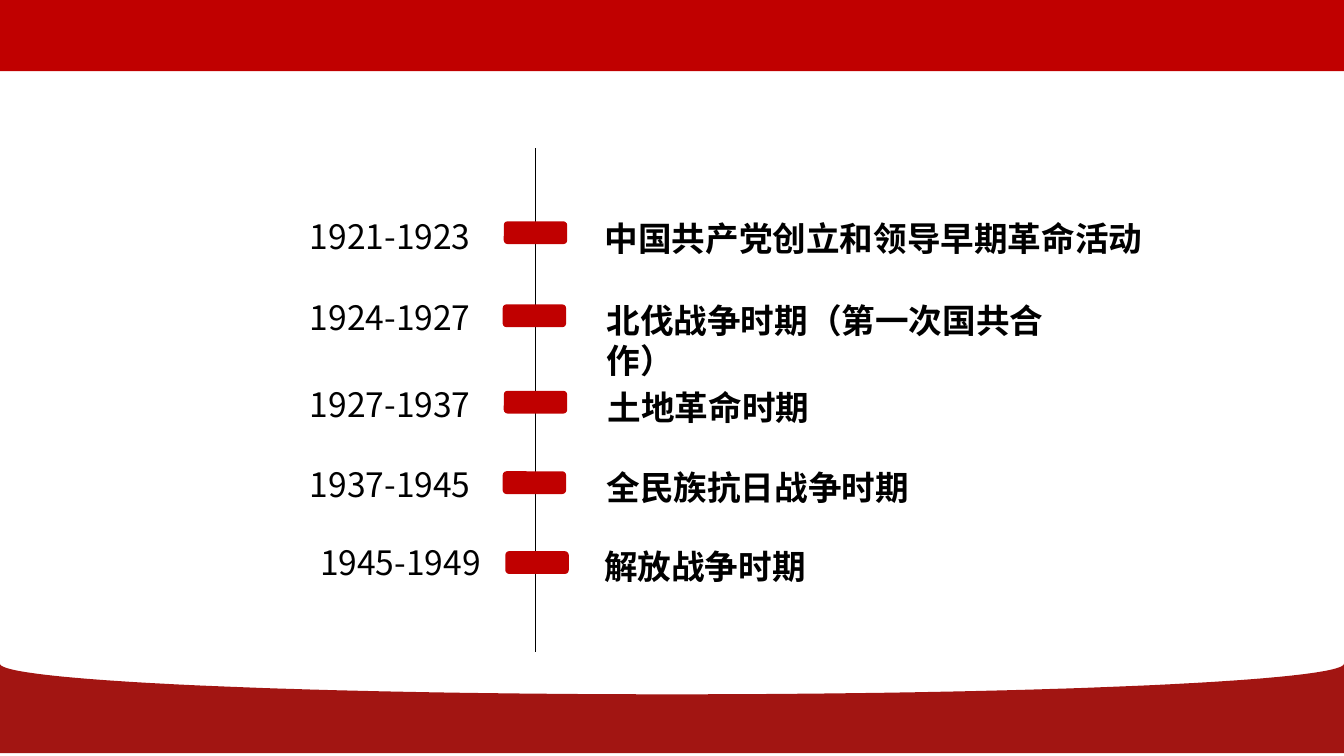
from math import cos, pi, sin

from lxml.etree import SubElement
from pptx import Presentation
from pptx.dml.color import RGBColor
from pptx.enum.shapes import MSO_CONNECTOR, MSO_SHAPE as SHAPE
from pptx.enum.text import MSO_AUTO_SIZE, PP_ALIGN as ALIGN
from pptx.oxml.ns import qn
from pptx.util import Pt

RED = RGBColor(0xC0, 0x00, 0x00)
DARK_RED = RGBColor(0xA2, 0x15, 0x12)
BLACK = RGBColor(0x00, 0x00, 0x00)
FONT = "Noto Sans CJK SC"

presentation = Presentation()
presentation.slide_width = Pt(720)
presentation.slide_height = Pt(405)
slide = presentation.slides.add_slide(presentation.slide_layouts[6])
shapes = slide.shapes


def paint(shape, color):
    shape.shadow.inherit = False
    shape.fill.solid()
    shape.fill.fore_color.rgb = color
    shape.line.fill.background()


def add_text(text, left, top, width, height, bold=False, align=ALIGN.LEFT):
    box = shapes.add_textbox(Pt(left), Pt(top), Pt(width), Pt(height))
    frame = box.text_frame
    frame.word_wrap = True
    frame.auto_size = MSO_AUTO_SIZE.SHAPE_TO_FIT_TEXT
    frame.margin_left = frame.margin_right = Pt(5.4)
    frame.margin_top = frame.margin_bottom = Pt(2.7)
    paragraph = frame.paragraphs[0]
    paragraph.alignment = align
    run = paragraph.add_run()
    run.text = text
    run.font.name = FONT
    run.font.size = Pt(18)
    run.font.bold = bold
    run.font.color.rgb = BLACK
    east_asian = SubElement(run.font._element, qn("a:ea"))
    east_asian.set("typeface", FONT)


header = shapes.add_shape(SHAPE.RECTANGLE, 0, 0, Pt(720), Pt(38.2))
paint(header, RED)

curve_steps = 120
curve = [
    (Pt(360 - 360 * cos(pi * step / curve_steps)),
     Pt(355.6 + 16.4 * sin(pi * step / curve_steps)))
    for step in range(curve_steps + 1)
]
builder = shapes.build_freeform(0, Pt(403.5))
builder.add_line_segments(curve + [(Pt(720), Pt(403.5))], close=True)
footer = builder.convert_to_shape()
paint(footer, DARK_RED)

axis = shapes.add_connector(MSO_CONNECTOR.STRAIGHT, Pt(286.8), Pt(79.4), Pt(286.8), Pt(349.2))
axis.line.color.rgb = BLACK
axis.line.width = Pt(0.5)
SubElement(axis._element.spPr, qn("a:effectLst"))

periods = [
    ("1921-1923", "中国共产党创立和领导早期革命活动", 113, 113.8, 318.5, 269.9, 118.6),
    ("1924-1927", "北伐战争时期（第一次国共合作）", 156.4, 157.9, 319.5, 269.3, 163.1),
    ("1927-1937", "土地革命时期", 203, 204.5, 320.1, 269.9, 209.4),
    ("1937-1945", "全民族抗日战争时期", 245.8, 247.5, 319.5, 269.3, 252.5),
    ("1945-1949", "解放战争时期", 287.5, 290, 318.2, 270.7, 295.3),
]
for years, event, years_top, event_top, event_left, marker_left, marker_top in periods:
    is_first = years == periods[0][0]
    is_last = years == periods[-1][0]
    height = 49 if is_first else 27.4
    add_text(years, 158.4 if is_last else 160.6, years_top, 112.3, height,
             align=ALIGN.CENTER if is_last else ALIGN.LEFT)
    add_text(event, event_left, event_top, 348 if is_first else 278, height, bold=True,
             align=ALIGN.JUSTIFY if is_last else ALIGN.LEFT)
    marker = shapes.add_shape(SHAPE.ROUNDED_RECTANGLE, Pt(marker_left), Pt(marker_top), Pt(34), Pt(12.2))
    paint(marker, RED)

presentation.save("out.pptx")
